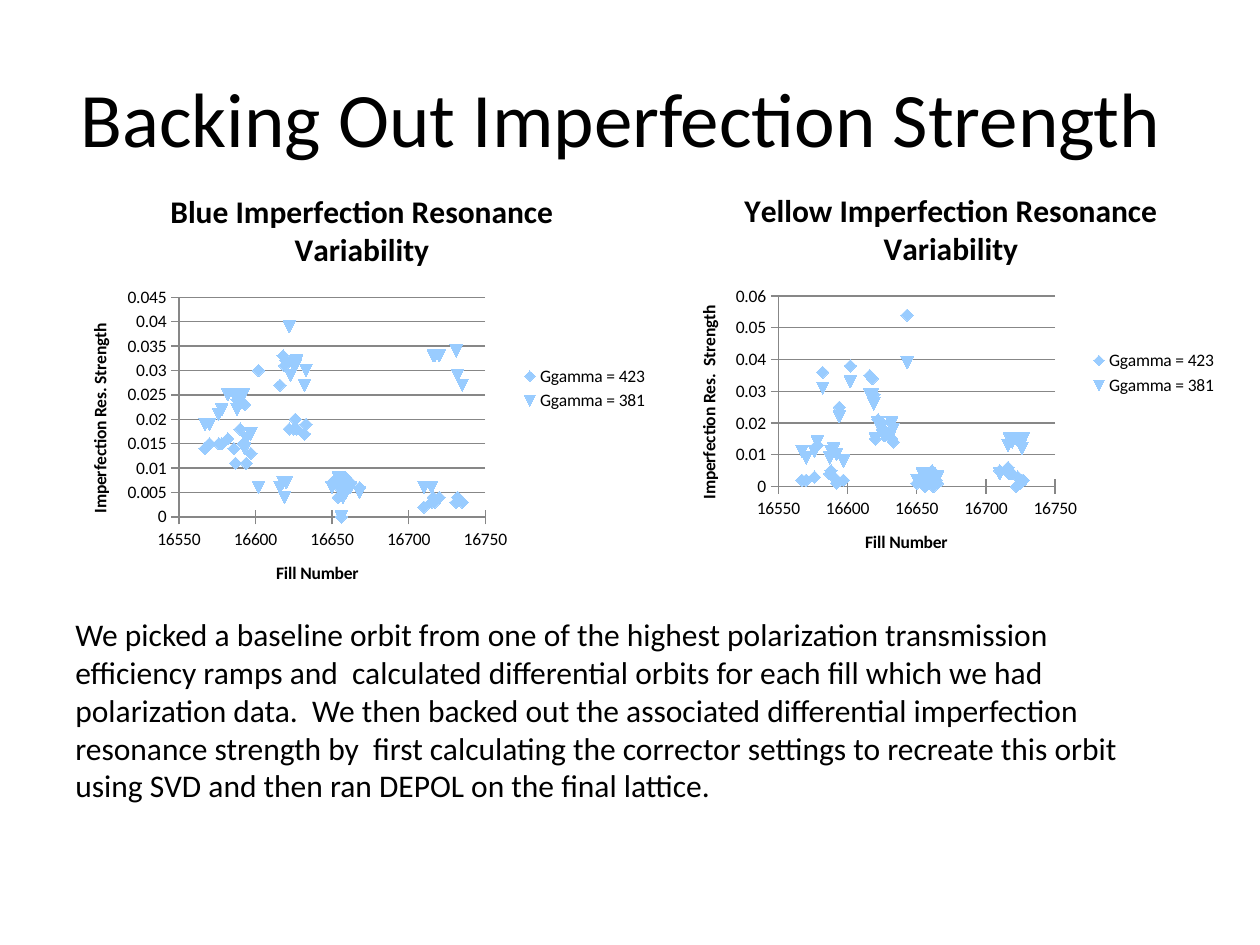
from pptx import Presentation
from pptx.chart.data import XyChartData
from pptx.dml.color import RGBColor
from pptx.enum.chart import XL_CHART_TYPE, XL_LEGEND_POSITION, XL_MARKER_STYLE, XL_TICK_MARK
from pptx.enum.text import MSO_ANCHOR, PP_ALIGN
from pptx.util import Emu, Pt

SCATTER = XL_CHART_TYPE.XY_SCATTER
RIGHT = XL_LEGEND_POSITION.RIGHT
AUTO = XL_MARKER_STYLE.AUTOMATIC
CROSS = XL_TICK_MARK.CROSS
MIDDLE, TOP = MSO_ANCHOR.MIDDLE, MSO_ANCHOR.TOP
CENTER, LEFT = PP_ALIGN.CENTER, PP_ALIGN.LEFT

PX = 914400 / 126
FONT = "Calibri"
COLORS = {"text": "000000", "marker": "99CCFF", "grid": "878787"}
SERIES = ["Ggamma = 423", "Ggamma = 381"]

TEXTS = [
    {"text": "Backing Out Imperfection Strength ", "box": (63, 38, 1134, 158),
     "size": 44, "align": CENTER, "anchor": MIDDLE},
    {"text": "We picked a baseline orbit from one of the highest polarization transmission "
             "efficiency ramps and  calculated differential orbits for each fill which we had "
             "polarization data.  We then backed out the associated differential imperfection "
             "resonance strength by  first calculating the corrector settings to recreate this "
             "orbit using SVD and then ran DEPOL on the final lattice.",
     "box": (63, 609, 1124, 204), "size": 18, "align": LEFT, "anchor": TOP},
]

BLUE_FILLS = [
    16633, 16715, 16618, 16731, 16619, 16567, 16623, 16570, 16576, 16578, 16582,
    16586, 16587, 16588, 16590, 16592, 16593, 16594, 16597, 16602, 16616, 16620,
    16622, 16625, 16626, 16627, 16632, 16650, 16654, 16655, 16656, 16657, 16659,
    16661, 16662, 16668, 16710, 16716, 16717, 16720, 16732, 16735]
BLUE_STRENGTHS = [
    [0.019, 0.003, 0.033, 0.003, 0.031, 0.014, 0.032, 0.015, 0.015, 0.015, 0.016,
     0.014, 0.011, 0.024, 0.018, 0.015, 0.023, 0.011, 0.013, 0.03, 0.027, 0.032,
     0.018, 0.018, 0.02, 0.018, 0.017, 0.007, 0.004, 0.006, 0, 0.006, 0.008,
     0.007, 0.007, 0.006, 0.002, 0.004, 0.003, 0.004, 0.004, 0.003],
    [0.03, 0.006, 0.007, 0.034, 0.004, 0.019, 0.029, 0.019, 0.021, 0.022, 0.025,
     0.025, 0.025, 0.022, 0.024, 0.025, 0.014, 0.016, 0.017, 0.006, 0.006, 0.007,
     0.039, 0.031, 0.031, 0.032, 0.027, 0.006, 0.008, 0.007, 0, 0.004, 0.005,
     0.006, 0.006, 0.005, 0.006, 0.033, 0.033, 0.033, 0.029, 0.027]]
YELLOW_FILLS = [
    16643, 16567, 16570, 16576, 16578, 16582, 16587, 16588, 16590, 16592, 16594,
    16597, 16602, 16616, 16618, 16619, 16620, 16622, 16625, 16626, 16627, 16632,
    16633, 16650, 16654, 16655, 16656, 16657, 16659, 16661, 16662, 16664, 16665,
    16710, 16716, 16717, 16719, 16722, 16723, 16725, 16725, 16726, 16727]
YELLOW_STRENGTHS = [
    [0.054, 0.002, 0.002, 0.003, 0.013, 0.036, 0.004, 0.005, 0.003, 0.001, 0.025,
     0.002, 0.038, 0.035, 0.034, 0.029, 0.015, 0.021, 0.018, 0.018, 0.017, 0.015,
     0.014, 0.001, 0.002, 0.001, 0, 0.002, 0.004, 0.005, 0, 0.002, 0.001,
     0.005, 0.006, 0.004, 0.004, 0, 0.003, 0.001, 0.001, 0.002, 0.002],
    [0.039, 0.011, 0.009, 0.011, 0.014, 0.031, 0.009, 0.011, 0.012, 0.01, 0.022,
     0.008, 0.033, 0.029, 0.029, 0.026, 0.015, 0.02, 0.019, 0.016, 0.016, 0.02,
     0.018, 0.002, 0.004, 0.004, 0, 0.002, 0.004, 0.002, 0.003, 0.002, 0.003,
     0.004, 0.013, 0.015, 0.014, 0.015, 0.015, 0.013, 0.013, 0.012, 0.015]]

CHARTS = [
    {"title": "Blue Imperfection Resonance Variability", "box": (63, 168, 598, 441),
     "y_title": "Imperfection Res. Strength", "fills": BLUE_FILLS,
     "strengths": BLUE_STRENGTHS, "y_max": 0.045, "y_step": 0.005},
    {"title": "Yellow Imperfection Resonance Variability", "box": (672, 168, 558, 410),
     "y_title": "Imperfection Res.  Strength", "fills": YELLOW_FILLS,
     "strengths": YELLOW_STRENGTHS, "y_max": 0.06, "y_step": 0.01},
]


def scale(box):
    return [Emu(round(v * PX)) for v in box]


def color(name):
    return RGBColor.from_string(COLORS[name])


def style_font(font, size, bold=False):
    for key, value in {"name": FONT, "size": Pt(size), "bold": bold}.items():
        setattr(font, key, value)
    font.color.rgb = color("text")


def set_title(owner, text, size):
    tf = owner.text_frame
    tf.text = text
    style_font(tf.paragraphs[0].runs[0].font, size, True)


def style_axis(axis, title, limits):
    set_title(axis.axis_title, title, 10)
    low, high, step = limits
    formats = {"minimum_scale": low, "maximum_scale": high, "major_unit": step,
               "major_tick_mark": CROSS}
    for key, value in formats.items():
        setattr(axis, key, value)
    axis.format.line.color.rgb = color("grid")


def add_text(slide, item):
    tf = slide.shapes.add_textbox(*scale(item["box"])).text_frame
    tf.word_wrap = True
    tf.vertical_anchor = item["anchor"]
    p = tf.paragraphs[0]
    p.alignment = item["align"]
    r = p.add_run()
    r.text = item["text"]
    style_font(r.font, item["size"])


def add_scatter(slide, item):
    data = XyChartData()
    for name, strengths in zip(SERIES, item["strengths"]):
        series = data.add_series(name)
        for fill, strength in zip(item["fills"], strengths):
            series.add_data_point(fill, strength)
    chart = slide.shapes.add_chart(SCATTER, *scale(item["box"]), data).chart
    style_font(chart.font, 10)
    set_title(chart.chart_title, item["title"], 18)
    chart.has_legend = True
    chart.legend.position = RIGHT
    chart.legend.include_in_layout = False
    style_axis(chart.category_axis, "Fill Number", (16550, 16750, 50))
    style_axis(chart.value_axis, item["y_title"], (0, item["y_max"], item["y_step"]))
    chart.category_axis.has_major_gridlines = False
    chart.value_axis.has_major_gridlines = True
    chart.value_axis.major_gridlines.format.line.color.rgb = color("grid")
    plot = chart.plots[0]
    plot.vary_by_categories = False
    for series in plot.series:
        series.smooth = False
        series.format.line.fill.background()
        marker = series.marker
        marker.style = AUTO
        marker.size = 7
        marker.format.fill.solid()
        marker.format.fill.fore_color.rgb = color("marker")
        marker.format.line.color.rgb = color("marker")


def main():
    prs = Presentation()
    prs.slide_width, prs.slide_height = scale((1260, 945))
    slide = prs.slides.add_slide(prs.slide_layouts[6])
    for item in TEXTS:
        add_text(slide, item)
    for item in CHARTS:
        add_scatter(slide, item)
    prs.save("out.pptx")


if __name__ == "__main__":
    main()
